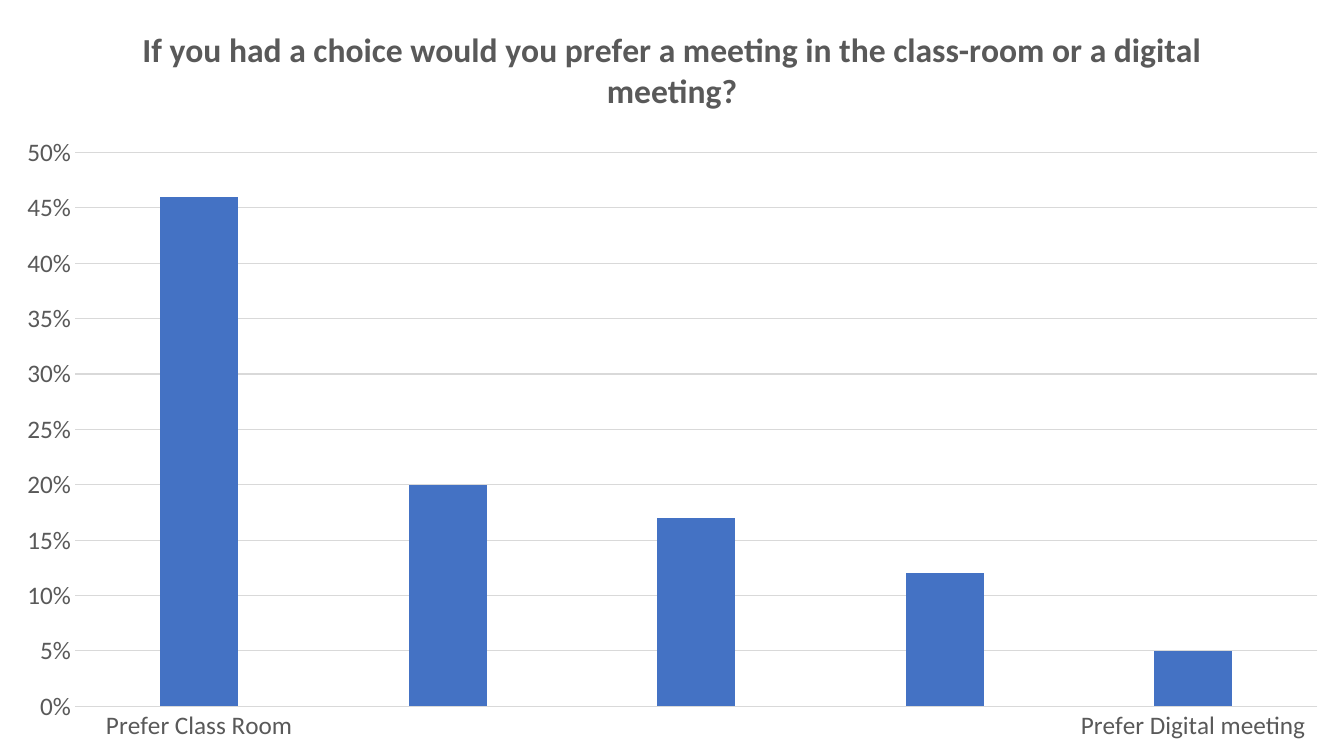
from lxml.etree import SubElement
from pptx import Presentation
from pptx.chart.data import CategoryChartData
from pptx.dml.color import RGBColor
from pptx.enum.chart import XL_CHART_TYPE, XL_TICK_MARK
from pptx.oxml.ns import qn
from pptx.util import Pt

WIDTH, HEIGHT = 960, 540


def rgb(value):
    return RGBColor.from_string(value)


class Deck:
    font_name = "Calibri"
    text_color = "595959"
    line_color = "D9D9D9"
    bar_color = "4472C4"

    def __init__(self, prs):
        self.s = prs.slides.add_slide(prs.slide_layouts[6])

    def style_font(self, font, size, bold=False):
        font.name = self.font_name
        font.size = Pt(size)
        font.bold = bold
        font.color.rgb = rgb(self.text_color)

    def style_line(self, line):
        line.color.rgb = rgb(self.line_color)
        line.width = Pt(0.75)

    def style_axis(self, axis):
        axis.major_tick_mark = XL_TICK_MARK.NONE
        axis.minor_tick_mark = XL_TICK_MARK.NONE
        self.style_font(axis.tick_labels.font, 18)

    def place_plot(self, chart, left, top, width, height):
        area = chart._chartSpace.chart.plotArea
        layout = area.find(qn("c:layout"))
        if layout is None:
            layout = SubElement(area, qn("c:layout"))
            area.insert(0, layout)
        manual = SubElement(layout, qn("c:manualLayout"))
        settings = {
            "layoutTarget": "inner", "xMode": "edge", "yMode": "edge",
            "x": left / WIDTH, "y": top / HEIGHT,
            "w": width / WIDTH, "h": height / HEIGHT,
        }
        for tag, value in settings.items():
            SubElement(manual, qn(f"c:{tag}")).set("val", str(value))

    def title(self, chart, text):
        chart.has_title = True
        tf = chart.chart_title.text_frame
        tf.text = text
        self.style_font(tf.paragraphs[0].font, 24, bold=True)
        chart.chart_title.include_in_layout = False

    def column_chart(self, title, categories, values):
        data = CategoryChartData(number_format="0%")
        data.categories = categories
        data.add_series("Series 1", values)
        chart = self.s.shapes.add_chart(
            XL_CHART_TYPE.COLUMN_CLUSTERED, 0, 0, Pt(WIDTH), Pt(HEIGHT), data
        ).chart
        self.style_font(chart.font, 10)
        chart.has_legend = False
        self.title(chart, title)
        self.place_plot(chart, left=53.5, top=109, width=887.5, height=395.5)

        plot = chart.plots[0]
        plot.gap_width = 219
        plot.overlap = -27
        plot.vary_by_categories = False
        fill = plot.series[0].format.fill
        fill.solid()
        fill.fore_color.rgb = rgb(self.bar_color)

        self.style_axis(chart.category_axis)
        self.style_line(chart.category_axis.format.line)

        axis = chart.value_axis
        self.style_axis(axis)
        axis.minimum_scale = 0
        axis.maximum_scale = 0.5
        axis.major_unit = 0.05
        axis.tick_labels.number_format = "0%"
        axis.tick_labels.number_format_is_linked = False
        axis.format.line.fill.background()
        self.style_line(axis.major_gridlines.format.line)


def main():
    prs = Presentation()
    prs.slide_width, prs.slide_height = Pt(WIDTH), Pt(HEIGHT)
    deck = Deck(prs)
    deck.column_chart(
        "If you had a choice would you prefer a meeting in the class-room or a digital meeting?",
        ["Prefer Class Room", "", "", "", "Prefer Digital meeting"],
        [0.46, 0.2, 0.17, 0.12, 0.05],
    )
    prs.save("out.pptx")


if __name__ == "__main__":
    main()
